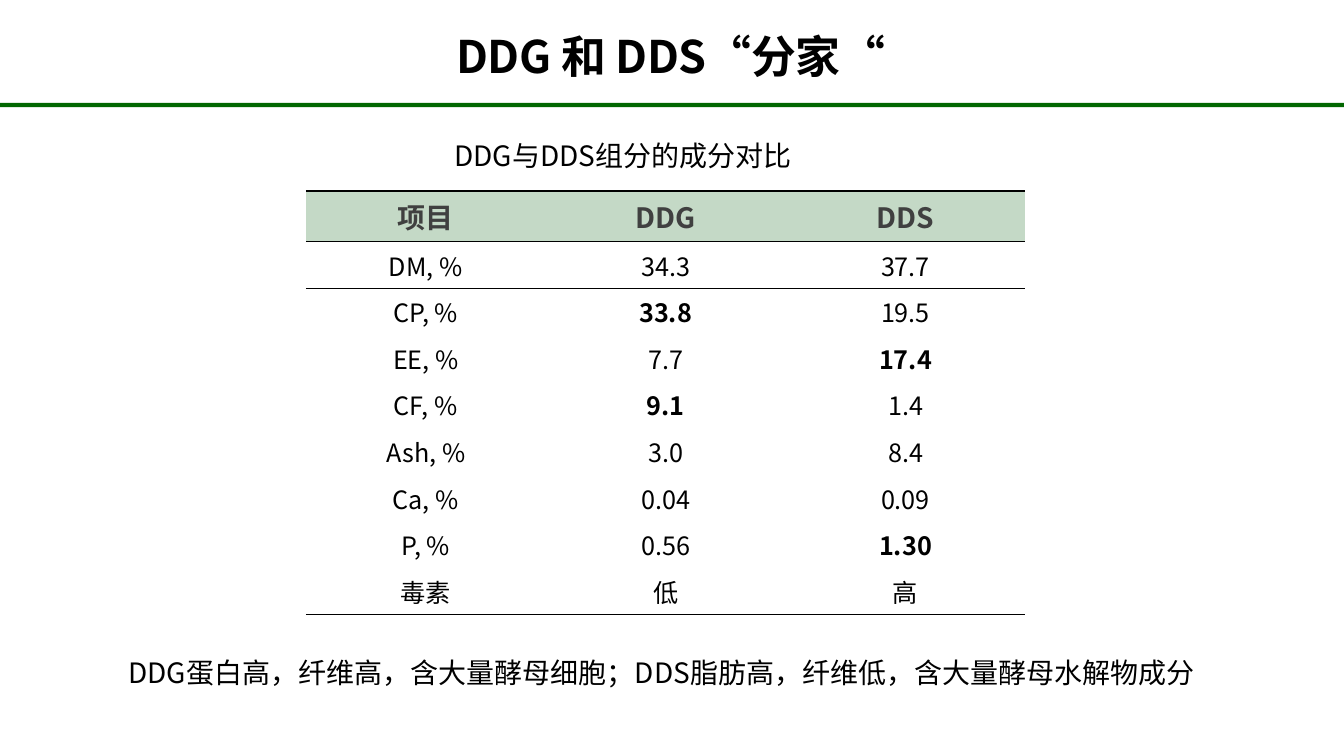
from pptx import Presentation
from pptx.dml.color import RGBColor
from pptx.enum.text import MSO_ANCHOR as ANCHOR, MSO_AUTO_SIZE as AUTO, PP_ALIGN as ALIGN
from pptx.enum.shapes import MSO_SHAPE as SHAPE
from pptx.oxml import parse_xml
from pptx.oxml.ns import nsdecls
from pptx.util import Pt

FONT = "Noto Sans CJK SC"
COLORS = {"black": "000000", "header_text": "404040", "header_fill": "C4D9C6", "rule": "026701"}


def write(tf, text, size=20, bold=False, color="black", align=ALIGN.CENTER, spacing=0):
    tf.vertical_anchor = ANCHOR.MIDDLE
    p = tf.paragraphs[0]
    p.alignment = align
    r = p.add_run()
    r.text = text
    r.font.size = Pt(size)
    r.font.bold = bold
    r.font.name = FONT
    r.font.color.rgb = RGBColor.from_string(COLORS[color])
    rPr = r.font._element
    rPr.append(parse_xml(f'<a:ea {nsdecls("a")} typeface="{FONT}"/>'))
    if spacing:
        rPr.set("spc", str(spacing))


def add_border(cell, side):
    cell._tc.get_or_add_tcPr().append(parse_xml(
        f'<a:ln{side} {nsdecls("a")} w="12700"><a:solidFill>'
        f'<a:srgbClr val="{COLORS["black"]}"/></a:solidFill></a:ln{side}>'))


prs = Presentation()
prs.slide_width, prs.slide_height = Pt(960), Pt(540)
s = prs.slides.add_slide(prs.slide_layouts[5])

# Title
title = s.shapes.title
title.left, title.top, title.width, title.height = Pt(22), Pt(19), Pt(914), Pt(41)
tf = title.text_frame
tf.auto_size = AUTO.NONE
tf.margin_left = tf.margin_right = tf.margin_top = tf.margin_bottom = 0
write(tf, "DDG 和 DDS“分家“", size=32, bold=True, spacing=-30)

# Green rule under the title
rule = s.shapes.add_shape(SHAPE.RECTANGLE, 0, Pt(73.5), Pt(960), Pt(3))
rule.shadow.inherit = False
rule.fill.solid()
rule.fill.fore_color.rgb = RGBColor.from_string(COLORS["rule"])
rule.line.fill.background()

# Table caption and conclusion
for text, left, top, width, height in [
    ("DDG与DDS组分的成分对比", 324.5, 95, 400, 32),
    ("DDG蛋白高，纤维高，含大量酵母细胞；DDS脂肪高，纤维低，含大量酵母水解物成分", 91.5, 460, 820, 40),
]:
    tf = s.shapes.add_textbox(Pt(left), Pt(top), Pt(width), Pt(height)).text_frame
    tf.word_wrap = True
    tf.margin_left = tf.margin_right = tf.margin_top = tf.margin_bottom = 0
    write(tf, text, align=ALIGN.LEFT)

# Composition table
rows = [
    ("项目", "DDG", "DDS"),
    ("DM, %", "34.3", "37.7"),
    ("CP, %", "33.8", "19.5"),
    ("EE, %", "7.7", "17.4"),
    ("CF, %", "9.1", "1.4"),
    ("Ash, %", "3.0", "8.4"),
    ("Ca, %", "0.04", "0.09"),
    ("P, %", "0.56", "1.30"),
    ("毒素", "低", "高"),
]
highlights = {"33.8", "17.4", "9.1", "1.30"}
header_height, row_height = 36.3, 33.3
table_height = header_height + row_height * (len(rows) - 1)
table = s.shapes.add_table(len(rows), 3, Pt(218.5), Pt(136.5), Pt(514), Pt(table_height)).table
table.first_row = table.horz_banding = False
# Style without fills and grid lines
table._tbl.tblPr.find("{*}tableStyleId").text = "{2D5ABB26-0587-4C30-8999-92F81FD0307C}"

for i, values in enumerate(rows):
    header = i == 0
    table.rows[i].height = Pt(header_height if header else row_height)
    for j, value in enumerate(values):
        cell = table.cell(i, j)
        cell.vertical_anchor = ANCHOR.MIDDLE
        if i <= 1:
            add_border(cell, "T")
        if header or i == len(rows) - 1:
            add_border(cell, "B")
        if header:
            cell.fill.solid()
            cell.fill.fore_color.rgb = RGBColor.from_string(COLORS["header_fill"])
            write(cell.text_frame, value, bold=True, color="header_text")
        else:
            cell.fill.background()
            write(cell.text_frame, value, size=18, bold=value in highlights)

prs.save("out.pptx")
